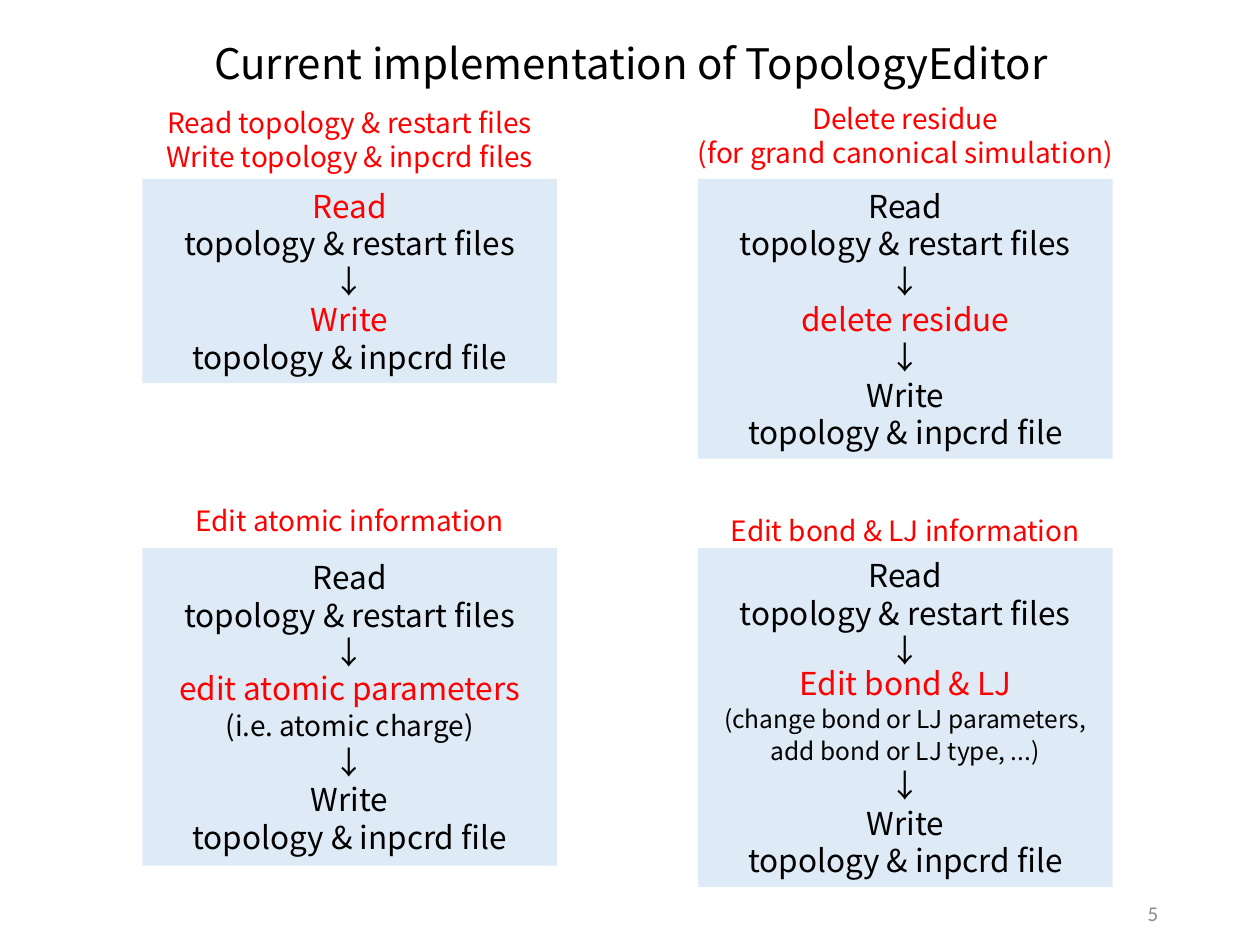
from pptx import Presentation
from pptx.dml.color import RGBColor
from pptx.enum.shapes import MSO_SHAPE
from pptx.enum.text import MSO_ANCHOR, PP_ALIGN
from pptx.util import Inches, Pt

RECTANGLE = MSO_SHAPE.RECTANGLE
TOP, MIDDLE = MSO_ANCHOR.TOP, MSO_ANCHOR.MIDDLE
CENTER, RIGHT = PP_ALIGN.CENTER, PP_ALIGN.RIGHT

COLORS = {"panel": "DEEBF7", "accent": "FF0000", "body": "000000", "number": "8C8C8C"}
BODY_FONT, NUMBER_FONT = "Noto Sans CJK JP", "Calibri"
LINE_FACTOR = 1.2
STEP_SIZE, HEADING_SIZE, TITLE_SIZE = 18, 16, 24

READ = ["Read", "topology & restart files", "↓"]
WRITE = ["Write", "topology & inpcrd file"]
PANEL_WIDTH = 3.29
LEFT_COLUMN, RIGHT_COLUMN = (1.13, 3.41), (5.54, 3.92)
UPPER_ROW, LOWER_ROW = 1.42, 4.35


def color(name):
    return RGBColor.from_string(COLORS[name])


def style(run, size, tone, font=BODY_FONT):
    run.font.size = Pt(size)
    run.font.name = font
    run.font.color.rgb = color(tone)


def add_label(slide, box, lines, size, tone, align=CENTER, anchor=TOP, font=BODY_FONT):
    frame = slide.shapes.add_textbox(*map(Inches, box)).text_frame
    frame.word_wrap = True
    frame.vertical_anchor = anchor
    frame.text = "\n".join(lines)
    for paragraph in frame.paragraphs:
        paragraph.alignment = align
        paragraph.line_spacing = Pt(size * LINE_FACTOR)
        style(paragraph.runs[0], size, tone, font)


def add_panel(slide, box, steps, highlights, note="", note_size=STEP_SIZE, note_lines=0):
    panel = slide.shapes.add_shape(RECTANGLE, *map(Inches, box))
    panel.shadow.inherit = False
    panel.fill.solid()
    panel.fill.fore_color.rgb = color("panel")
    panel.line.fill.background()
    frame = panel.text_frame
    frame.word_wrap = True
    frame.vertical_anchor = MIDDLE
    frame.text = "\n".join(steps)
    for step, paragraph in zip(steps, frame.paragraphs):
        highlighted = step in highlights
        paragraph.alignment = CENTER
        line_size = STEP_SIZE
        style(paragraph.runs[0], STEP_SIZE, "accent" if highlighted else "body")
        if highlighted and note:
            paragraph.add_line_break()
            detail = paragraph.add_run()
            detail.text = note
            style(detail, note_size, "body")
            line_size = (STEP_SIZE + note_size * note_lines) / (1 + note_lines)
        paragraph.line_spacing = Pt(round(line_size * LINE_FACTOR, 1))


def add_workflow(slide, column, top, height, heading, heading_top, steps, highlights, **note):
    left, heading_width = column
    heading_left = left + (PANEL_WIDTH - heading_width) / 2
    heading_height = 0.1 + 0.27 * len(heading)
    add_panel(slide, (left, top, PANEL_WIDTH, height), steps, highlights, **note)
    add_label(slide, (heading_left, heading_top, heading_width, heading_height),
              heading, HEADING_SIZE, "accent")


def main():
    deck = Presentation()
    deck.slide_width, deck.slide_height = Inches(10), Inches(7.5)
    slide = deck.slides.add_slide(deck.slide_layouts[6])

    add_label(slide, (7.04, 7.05, 2.25, 0.4), ["5"], 12, "number", RIGHT, MIDDLE, NUMBER_FONT)
    add_label(slide, (0.78, 0.25, 8.45, 0.5), ["Current implementation of TopologyEditor"],
              TITLE_SIZE, "body")

    add_workflow(slide, LEFT_COLUMN, UPPER_ROW, 1.62,
                 ["Read topology & restart files", "Write topology & inpcrd files"], 0.79,
                 READ + WRITE, ["Read", "Write"])
    add_workflow(slide, LEFT_COLUMN, LOWER_ROW, 2.52, ["Edit atomic information"], 3.95,
                 READ + ["edit atomic parameters", "↓"] + WRITE, ["edit atomic parameters"],
                 note="(i.e. atomic charge)", note_size=16, note_lines=1)
    add_workflow(slide, RIGHT_COLUMN, UPPER_ROW, 2.22,
                 ["Delete residue", "(for grand canonical simulation)"], 0.76,
                 READ + ["delete residue", "↓"] + WRITE, ["delete residue"])
    add_workflow(slide, RIGHT_COLUMN, LOWER_ROW, 2.69, ["Edit bond & LJ information"], 4.03,
                 READ + ["Edit bond & LJ", "↓"] + WRITE, ["Edit bond & LJ"],
                 note="(change bond or LJ parameters, add bond or LJ type, ...)",
                 note_size=14, note_lines=2)
    deck.save("out.pptx")


if __name__ == "__main__":
    main()
